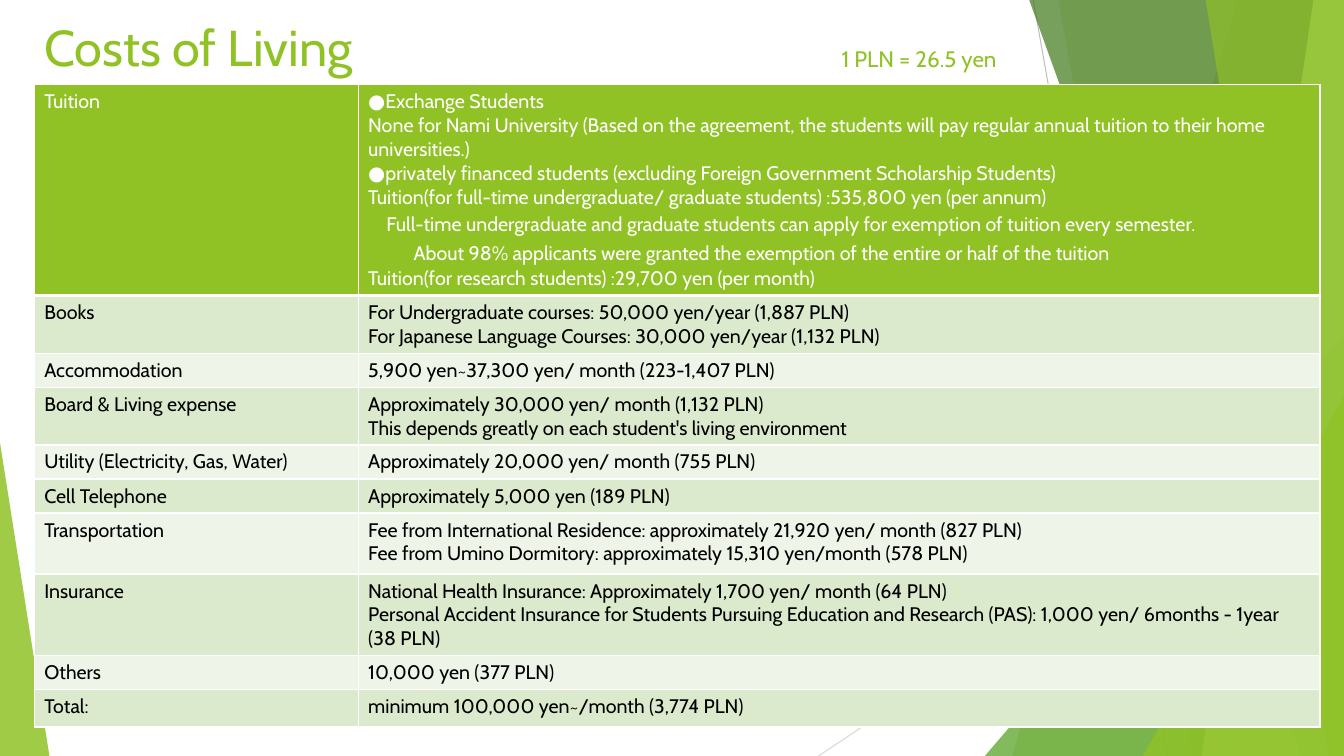
from lxml import etree
from pptx import Presentation, util as u
from pptx.dml.color import RGBColor
from pptx.enum import shapes, text
from pptx.oxml import parse_xml
from pptx.oxml.ns import nsdecls, qn

LIME = RGBColor(0x90, 0xC2, 0x26)
GREEN = RGBColor(0x54, 0xA0, 0x21)
FOREST = RGBColor(0x3F, 0x78, 0x19)
PALE_LIME = RGBColor(0xC0, 0xE4, 0x74)
BAND_DARK = RGBColor(0xDB, 0xE9, 0xCD)
BAND_LIGHT = RGBColor(0xEE, 0xF4, 0xE8)
WHITE = RGBColor(0xFF, 0xFF, 0xFF)
BLACK = RGBColor(0, 0, 0)
GREY = RGBColor(0xBF, 0xBF, 0xBF)
LIGHT_GREY = RGBColor(0xD9, 0xD9, 0xD9)

deck = Presentation()
deck.slide_width, deck.slide_height = u.Inches(13.33), u.Inches(7.5)
page = deck.slides.add_slide(deck.slide_layouts[6])


def wide(percent):
    return round(deck.slide_width * percent / 100)


def tall(percent):
    return round(deck.slide_height * percent / 100)


# Thin background lines
for x1, y1, x2, y2, colour in [(76.88, 0, 86.85, 100, GREY),
                               (100, 53.73, 60.9, 100, LIGHT_GREY)]:
    line = page.shapes.add_connector(shapes.MSO_CONNECTOR.STRAIGHT,
                                     wide(x1), tall(y1), wide(x2), tall(y2))
    line.line.color.rgb = colour
    line.line.width = u.Pt(0.75)
    etree.SubElement(line._element.spPr, qn("a:effectLst"))

# Translucent facets, back to front
# band: top x, bottom x; triangle: left, right, top, tip position
facets = [
    ("band", (92.1, 75.3), LIME, 30),
    ("band", (78.75, 88.73), LIME, 20),
    ("triangle", (73.28, 100, 44.4, 1), GREEN, 72),
    ("band", (76.58, 96.83), FOREST, 70),
    ("band", (97.73, 89.4), PALE_LIME, 70),
    ("band", (89.7, 98.85), LIME, 65),
    ("triangle", (85.05, 100, 52.4, 1), LIME, 80),
    ("triangle", (0, 3.68, 58.53, 0), LIME, 85),
]
for kind, place, colour, opacity in facets:
    if kind == "band":
        top_x, bottom_x = place
        outline = page.shapes.build_freeform(wide(top_x), 0)
        outline.add_line_segments([(wide(100), 0), (wide(100), tall(100)),
                                   (wide(bottom_x), tall(100))], close=True)
        facet = outline.convert_to_shape()
    else:
        left, right, top, tip = place
        facet = page.shapes.add_shape(
            shapes.MSO_SHAPE.ISOSCELES_TRIANGLE, wide(left), tall(top),
            wide(right - left), tall(100 - top))
        facet.adjustments[0] = tip
    facet.shadow.inherit = False
    facet.line.fill.background()
    facet.fill.solid()
    facet.fill.fore_color.rgb = colour
    tint = facet._element.spPr.find(qn("a:solidFill"))[0]
    etree.SubElement(tint, qn("a:alpha"), val=str(opacity * 1000))

# Title and exchange rate
styled = []
for words, left, top, width, height, size in [
        ("Costs of Living", 2.55, 1.47, 26.93, 11.33, 36),
        ("1 PLN = 26.5 yen", 61.88, 5.33, 15.15, 5.87, 16)]:
    box = page.shapes.add_textbox(wide(left), tall(top), wide(width), tall(height))
    box.text_frame.word_wrap = True
    box.text_frame.text = words
    styled.append((box.text_frame, size, LIME))

# Cost table: row height, item, lines of detail
costs = [
    (27.87, "Tuition", [
        "●Exchange Students",
        "None for Nami University (Based on the agreement, the students will pay "
        "regular annual tuition to their home universities.)",
        "●privately financed students (excluding Foreign Government Scholarship Students)",
        "Tuition(for full-time undergraduate/ graduate students) :535,800 yen (per annum)",
        "Full-time undergraduate and graduate students can apply for exemption of "
        "tuition every semester.",
        "About 98% applicants were granted the exemption of the entire or half of the tuition",
        "Tuition(for research students) :29,700 yen (per month)"]),
    (7.7, "Books", [
        "For Undergraduate courses: 50,000 yen/year (1,887 PLN)",
        "For Japanese Language Courses: 30,000 yen/year (1,132 PLN)"]),
    (4.5, "Accommodation", ["5,900 yen~37,300 yen/ month (223-1,407 PLN)"]),
    (7.6, "Board & Living expense", [
        "Approximately 30,000 yen/ month (1,132 PLN)",
        "This depends greatly on each student's living environment"]),
    (4.5, "Utility (Electricity, Gas, Water)",
        ["Approximately 20,000 yen/ month (755 PLN)"]),
    (4.5, "Cell Telephone", ["Approximately 5,000 yen (189 PLN)"]),
    (8.07, "Transportation", [
        "Fee from International Residence: approximately 21,920 yen/ month (827 PLN)",
        "Fee from Umino Dormitory: approximately 15,310 yen/month (578 PLN)"]),
    (10.8, "Insurance", [
        "National Health Insurance: Approximately 1,700 yen/ month (64 PLN)",
        "Personal Accident Insurance for Students Pursuing Education and Research "
        "(PAS): 1,000 yen/ 6months - 1year (38 PLN)"]),
    (4.5, "Others", ["10,000 yen (377 PLN)"]),
    (4.93, "Total:", ["minimum 100,000 yen~/month (3,774 PLN)"]),
]
columns = [24.1, 71.57]
table = page.shapes.add_table(
    len(costs), len(columns), wide(2.55), tall(11.2), wide(sum(columns)),
    tall(sum(height for height, _, _ in costs))).table
table.first_row = table.horz_banding = False
for column, width in zip(table.columns, columns):
    column.width = wide(width)

for r, (height, item, details) in enumerate(costs):
    table.rows[r].height = tall(height)
    fill = LIME if r == 0 else (BAND_LIGHT, BAND_DARK)[r % 2]
    for c, words in enumerate([item, "\n".join(details)]):
        cell = table.cell(r, c)
        cell.text_frame.text = words
        styled.append((cell.text_frame, 14, BLACK if r else WHITE))
        for side in "LRTB":
            heavy = (r, side) in [(0, "B"), (1, "T")]
            cell._tc.get_or_add_tcPr().append(parse_xml(
                f'<a:ln{side} {nsdecls("a")} w="{u.Pt(3 if heavy else 1)}">'
                f'<a:solidFill><a:srgbClr val="{WHITE}"/></a:solidFill></a:ln{side}>'))
        cell.fill.solid()
        cell.fill.fore_color.rgb = fill

# Indented remarks on the tuition exemption
tuition = table.cell(0, 1).text_frame.paragraphs
for line_number, indent, gap in [(4, 0.18, 2.5), (5, 0.45, 3.5), (6, 0, 1)]:
    para = tuition[line_number]
    para.space_before = u.Pt(gap)
    para._p.get_or_add_pPr().set("marL", str(u.Inches(indent)))

# Fonts
for frame, size, colour in styled:
    frame.vertical_anchor = text.MSO_ANCHOR.TOP
    for para in frame.paragraphs:
        for span in para.runs:
            span.font.color.rgb = colour
            for name, value in {"name": "Cabin", "size": u.Pt(size), "bold": False}.items():
                setattr(span.font, name, value)

deck.save("out.pptx")
